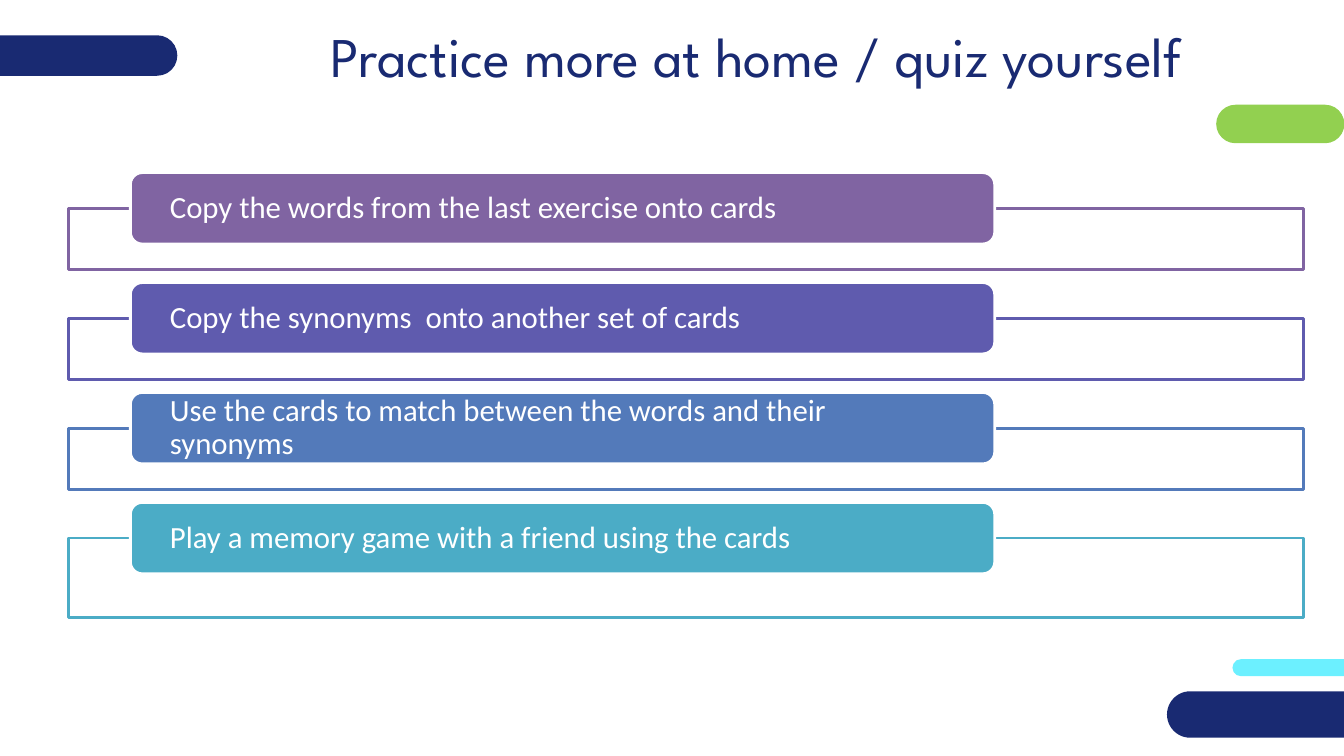
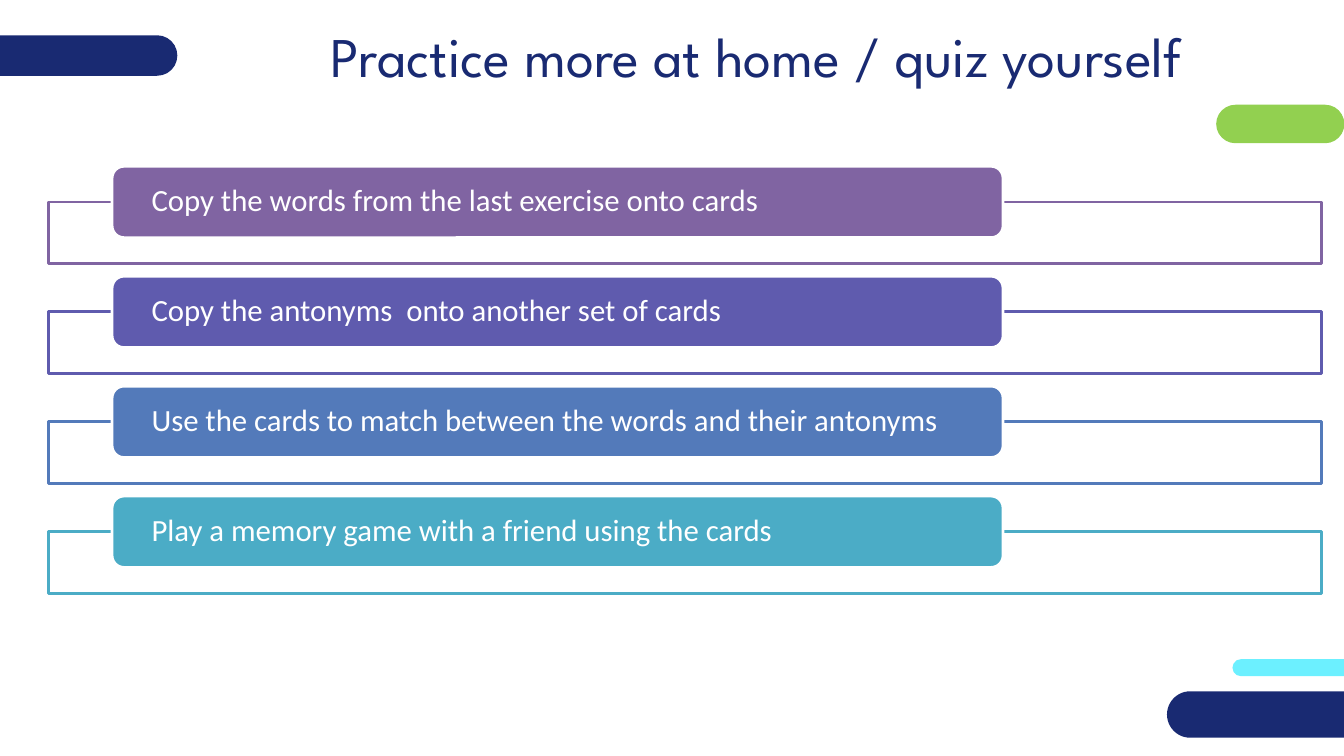
import collections

import lxml.etree
import pptx
import pptx.dml.color
import pptx.enum.shapes
import pptx.enum.text
import pptx.oxml.ns
import pptx.util

Cm = pptx.util.Cm
Pt = pptx.util.Pt
RGBColor = pptx.dml.color.RGBColor
MSO_SHAPE = pptx.enum.shapes.MSO_SHAPE
PP_ALIGN = pptx.enum.text.PP_ALIGN
MSO_ANCHOR = pptx.enum.text.MSO_ANCHOR
MSO_AUTO_SIZE = pptx.enum.text.MSO_AUTO_SIZE
qn = pptx.oxml.ns.qn

Box = collections.namedtuple("Box", "left top width height")

WHITE = RGBColor(0xFF, 0xFF, 0xFF)
NAVY = RGBColor(0x19, 0x2A, 0x72)
GREEN = RGBColor(0x92, 0xD0, 0x50)
CYAN = RGBColor(0x6C, 0xF0, 0xFF)
PURPLE = RGBColor(0x80, 0x64, 0xA2)
INDIGO = RGBColor(0x5F, 0x5B, 0xAE)
BLUE = RGBColor(0x53, 0x7A, 0xBA)
TEAL = RGBColor(0x4B, 0xAC, 0xC6)
STEP_COLORS = [PURPLE, INDIGO, BLUE, TEAL]

BANDS = [
    (Box(31.06, 16.61, 4.42, 0.43), CYAN),
    (Box(30.65, 2.64, 3.23, 0.97), GREEN),
    (Box(-1.35, 0.89, 5.82, 1.02), NAVY),
    (Box(29.41, 17.42, 6.1, 1.17), NAVY),
]

TITLE = "Practice more at home / quiz yourself"
TITLE_BOX = Box(4.83, 0.51, 28.47, 1.78)
TITLE_FONT = {"name": "League Spartan", "size": Pt(40)}
TITLE_FRAME = {
    "vertical_anchor": MSO_ANCHOR.MIDDLE,
    "auto_size": MSO_AUTO_SIZE.NONE,
    "word_wrap": True,
}

STEP_PITCH = 2.77
FRAME_HEIGHT = 1.55
TAB_HEIGHT = 1.8
TAB_INDENT = 0.05
TAB_SHARE = 0.7
STEP_FONT = {"name": "Calibri", "size": Pt(22)}
STEP_PARAGRAPH = {"alignment": PP_ALIGN.LEFT, "line_spacing": 0.9}
STEP_FRAME = {
    "vertical_anchor": MSO_ANCHOR.MIDDLE,
    "word_wrap": True,
    "margin_left": Cm(0.91),
    "margin_right": Cm(0.91),
    "margin_top": 0,
    "margin_bottom": 0,
}

PRACTICE_SLIDES = [
    (
        Box(1.73, 4.35, 31.12, 11.21),
        [
            "Copy the words from the last exercise onto cards",
            "Copy the synonyms  onto another set of cards",
            "Use the cards to match between the words and their synonyms",
            "Play a memory game with a friend using the cards",
        ],
    ),
    (
        Box(1.22, 4.19, 32.08, 10.76),
        [
            "Copy the words from the last exercise onto cards",
            "Copy the antonyms  onto another set of cards",
            "Use the cards to match between the words and their antonyms",
            "Play a memory game with a friend using the cards",
        ],
    ),
]


def apply_format(target, values):
    for attribute, value in values.items():
        setattr(target, attribute, value)


def place(target, box):
    apply_format(target, {side: Cm(length) for side, length in box._asdict().items()})


def add_block(slide, kind, box, fill, outline=None):
    block = slide.shapes.add_shape(kind, *map(Cm, box))
    block.shadow.inherit = False
    block.fill.solid()
    block.fill.fore_color.rgb = fill
    if outline is None:
        block.line.fill.background()
    else:
        block.line.color.rgb = outline
        block.line.width = Pt(2)
    return block


def move_bands_to_layout(slide):
    for position, (box, color) in enumerate(BANDS, start=2):
        band = add_block(slide, MSO_SHAPE.ROUNDED_RECTANGLE, box, color)
        band.adjustments[0] = 0.5
        slide.slide_layout.shapes.element.insert(position, band.element)


def add_title(slide, box):
    title = slide.shapes.title
    place(title, box)
    apply_format(title.text_frame, TITLE_FRAME)
    heading = title.text_frame.paragraphs[0]
    heading.text = TITLE
    heading.alignment = PP_ALIGN.CENTER
    apply_format(heading.font, TITLE_FONT)
    heading.font.color.rgb = NAVY


def add_step(slide, box, wording, color):
    frame_top = box.top + TAB_HEIGHT / 2
    frame_box = Box(box.left, frame_top, box.width, box.top + box.height - frame_top)
    frame = add_block(slide, MSO_SHAPE.RECTANGLE, frame_box, WHITE, color)
    frame_fill = frame.element.spPr.find(qn("a:solidFill")).find(qn("a:srgbClr"))
    lxml.etree.SubElement(frame_fill, qn("a:alpha"), val="90000")

    tab_box = Box(
        box.left + TAB_INDENT * box.width, box.top, TAB_SHARE * box.width, TAB_HEIGHT
    )
    tab = add_block(slide, MSO_SHAPE.ROUNDED_RECTANGLE, tab_box, color, WHITE)
    apply_format(tab.text_frame, STEP_FRAME)
    step = tab.text_frame.paragraphs[0]
    step.text = wording
    apply_format(step, STEP_PARAGRAPH)
    apply_format(step.font, STEP_FONT)
    step.font.color.rgb = WHITE


def add_steps(slide, box, wordings):
    last = len(wordings) - 1
    for index, (wording, color) in enumerate(zip(wordings, STEP_COLORS)):
        offset = index * STEP_PITCH
        height = box.height - offset if index == last else TAB_HEIGHT / 2 + FRAME_HEIGHT
        step_box = Box(box.left, box.top + offset, box.width, height)
        add_step(slide, step_box, wording, color)


def add_practice_slide(presentation, layout, steps_box, wordings):
    slide = presentation.slides.add_slide(layout)
    add_title(slide, TITLE_BOX)
    add_steps(slide, steps_box, wordings)
    return slide


def main():
    presentation = pptx.Presentation()
    presentation.slide_width = Cm(33.87)
    presentation.slide_height = Cm(19.05)
    title_only = presentation.slide_layouts[5]
    slides = [
        add_practice_slide(presentation, title_only, steps_box, wordings)
        for steps_box, wordings in PRACTICE_SLIDES
    ]
    move_bands_to_layout(slides[0])
    presentation.save("out.pptx")


if __name__ == "__main__":
    main()
